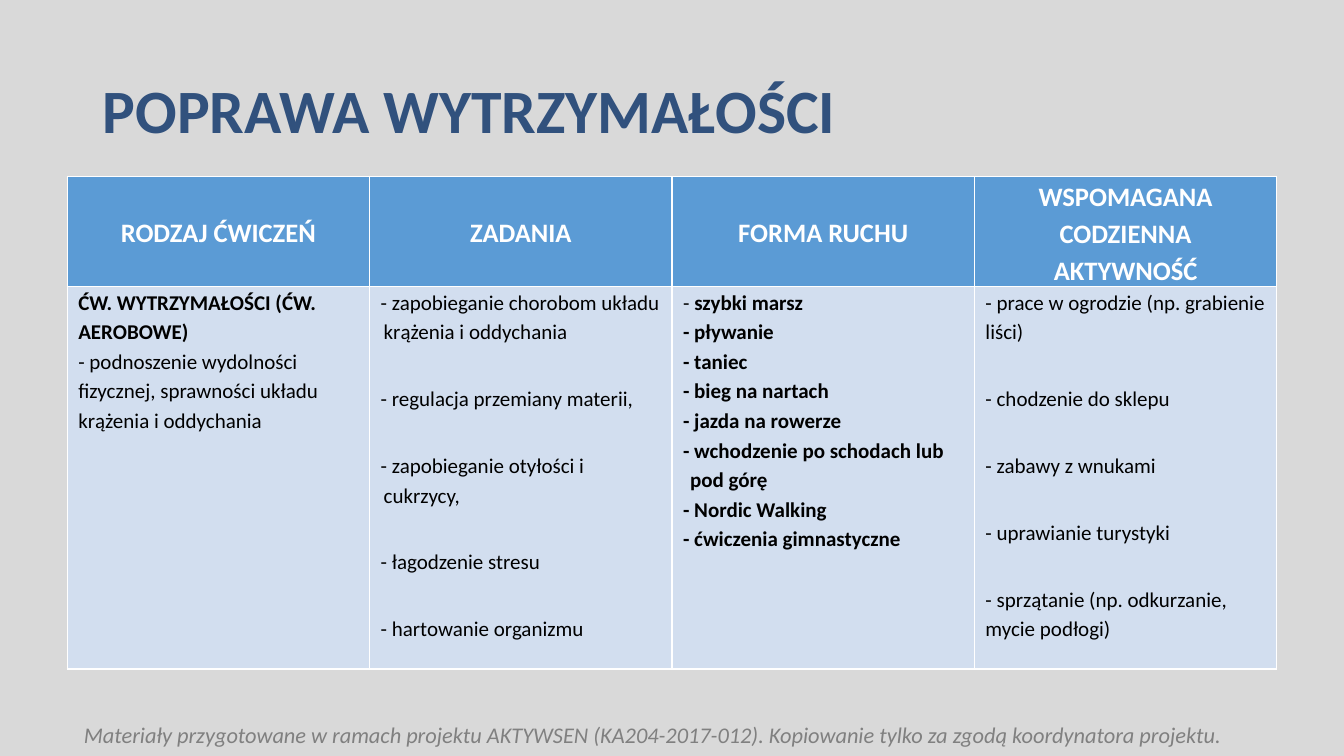
from lxml import etree
from pptx import Presentation
from pptx import util as u
from pptx.dml.color import RGBColor
from pptx.enum import text
from pptx.oxml.ns import qn

WIDTH, HEIGHT = 13.33, 7.5
FONT = "Calibri"
BLANK_LAYOUT = 6
TASK_GAP = 26.65

HEADINGS = [
    ["RODZAJ ĆWICZEŃ"],
    ["ZADANIA"],
    ["FORMA RUCHU"],
    ["WSPOMAGANA", "CODZIENNA", "AKTYWNOŚĆ"],
]
EXERCISE = "ĆW. WYTRZYMAŁOŚCI (ĆW. AEROBOWE)"
EXERCISE_AIM = "- podnoszenie wydolności fizycznej, sprawności układu krążenia i oddychania"
TASKS = [
    "- zapobieganie chorobom układu krążenia i oddychania",
    "- regulacja przemiany materii,",
    "- zapobieganie otyłości i cukrzycy,",
    "- łagodzenie stresu",
    "- hartowanie organizmu",
]
FIRST_MOVEMENT = "szybki marsz"
MOVEMENTS = [
    "- pływanie",
    "- taniec",
    "- bieg na nartach",
    "- jazda na rowerze",
    "- wchodzenie po schodach lub pod górę",
    "- Nordic Walking",
    "- ćwiczenia gimnastyczne",
]
DAILY_ACTIVITIES = [
    "- prace w ogrodzie (np. grabienie liści)",
    "- chodzenie do sklepu",
    "- zabawy z wnukami",
    "- uprawianie turystyki",
    "- sprzątanie (np. odkurzanie, mycie podłogi)",
]
FOOTNOTE = ("Materiały przygotowane w ramach projektu AKTYWSEN (KA204-2017-012). "
            "Kopiowanie tylko za zgodą koordynatora projektu.")


def colour(hex_code):
    return RGBColor.from_string(hex_code)


def lines(items, bold=False):
    """Turn each string into a paragraph holding a single (words, bold) run."""
    return [[(item, bold)] for item in items]


class Board:
    """Holds the style and the slide; places are shares of the slide's size."""

    background, title_blue, grey = "D9D9D9", "31517D", "808080"
    head_fill, body_fill, white, black = "5B9BD5", "D2DEEF", "FFFFFF", "000000"

    def __init__(self):
        self.deck = Presentation()
        self.deck.slide_width = u.Inches(WIDTH)
        self.deck.slide_height = u.Inches(HEIGHT)
        self.slide = self.deck.slides.add_slide(self.deck.slide_layouts[BLANK_LAYOUT])
        fill = self.slide.background.fill
        fill.solid()
        fill.fore_color.rgb = colour(self.background)

    def place(self, left, top, width, height):
        return (u.Inches(left * WIDTH), u.Inches(top * HEIGHT),
                u.Inches(width * WIDTH), u.Inches(height * HEIGHT))

    def style(self, run, size, ink, bold=False, italic=False):
        font = run.font
        font.name, font.size = FONT, u.Pt(size)
        font.bold, font.italic = bold, italic
        font.color.rgb = colour(ink)

    def line(self, words, area, size, ink, anchor, spacing=1.0, **emphasis):
        frame = self.slide.shapes.add_textbox(*self.place(*area)).text_frame
        frame.word_wrap = True
        frame.vertical_anchor = anchor
        frame.text = words
        paragraph = frame.paragraphs[0]
        paragraph.line_spacing = spacing
        self.style(paragraph.runs[0], size, ink, **emphasis)

    def table(self, area, row_heights, columns):
        grid = self.slide.shapes.add_table(
            len(row_heights), columns, *self.place(*area)).table
        for row, height in zip(grid.rows, row_heights):
            row.height = u.Inches(height * HEIGHT)
        return grid

    def border(self, cell):
        properties = cell._tc.get_or_add_tcPr()
        for side in ("lnL", "lnR", "lnT", "lnB"):
            edge = etree.SubElement(properties, qn(f"a:{side}"), w=str(u.Pt(1)))
            solid = etree.SubElement(edge, qn("a:solidFill"))
            etree.SubElement(solid, qn("a:srgbClr"), val=self.white)

    def fill_cell(self, cell, paragraphs, heading=False, gap=0, hanging=0):
        """Write paragraphs of (words, bold) runs; hanging is in inches."""
        self.border(cell)
        cell.fill.solid()
        cell.fill.fore_color.rgb = colour(self.head_fill if heading else self.body_fill)
        cell.margin_left = cell.margin_right = u.Inches(0.11)
        cell.margin_top = cell.margin_bottom = 0
        cell.vertical_anchor = text.MSO_ANCHOR.MIDDLE if heading else text.MSO_ANCHOR.TOP
        size, ink = (19, self.white) if heading else (15, self.black)
        frame = cell.text_frame
        for index, runs in enumerate(paragraphs):
            paragraph = frame.add_paragraph() if index else frame.paragraphs[0]
            paragraph.alignment = text.PP_ALIGN.CENTER if heading else text.PP_ALIGN.LEFT
            paragraph.line_spacing = 1.15
            paragraph.space_before = u.Pt(gap if index else 0)
            if hanging:
                indents = paragraph._p.get_or_add_pPr()
                indents.set("marL", str(u.Inches(hanging)))
                indents.set("indent", str(-u.Inches(hanging)))
            for words, bold in runs:
                run = paragraph.add_run()
                run.text = words
                self.style(run, size, ink, bold)


def main():
    board = Board()
    board.line("POPRAWA WYTRZYMAŁOŚCI", (0.069, 0.053, 0.863, 0.193), 44,
               board.title_blue, text.MSO_ANCHOR.MIDDLE, 0.9, bold=True)

    exercises = board.table((0.05, 0.2333, 0.9, 0.65), (0.143, 0.506), len(HEADINGS))
    for column, heading in enumerate(HEADINGS):
        board.fill_cell(exercises.cell(0, column), lines(heading, True), heading=True)

    bodies = [
        (lines([EXERCISE], True) + lines([EXERCISE_AIM]), 0, 0),
        (lines(TASKS), TASK_GAP, 0.03),
        ([[("- ", False), (FIRST_MOVEMENT, True)]] + lines(MOVEMENTS, True), 0, 0.07),
        (lines(DAILY_ACTIVITIES), TASK_GAP, 0),
    ]
    for column, (paragraphs, gap, hanging) in enumerate(bodies):
        board.fill_cell(exercises.cell(1, column), paragraphs, gap=gap, hanging=hanging)

    board.line(FOOTNOTE, (0.055, 0.947, 0.938, 0.049), 16,
               board.grey, text.MSO_ANCHOR.TOP, italic=True)
    board.deck.save("out.pptx")


if __name__ == "__main__":
    main()
